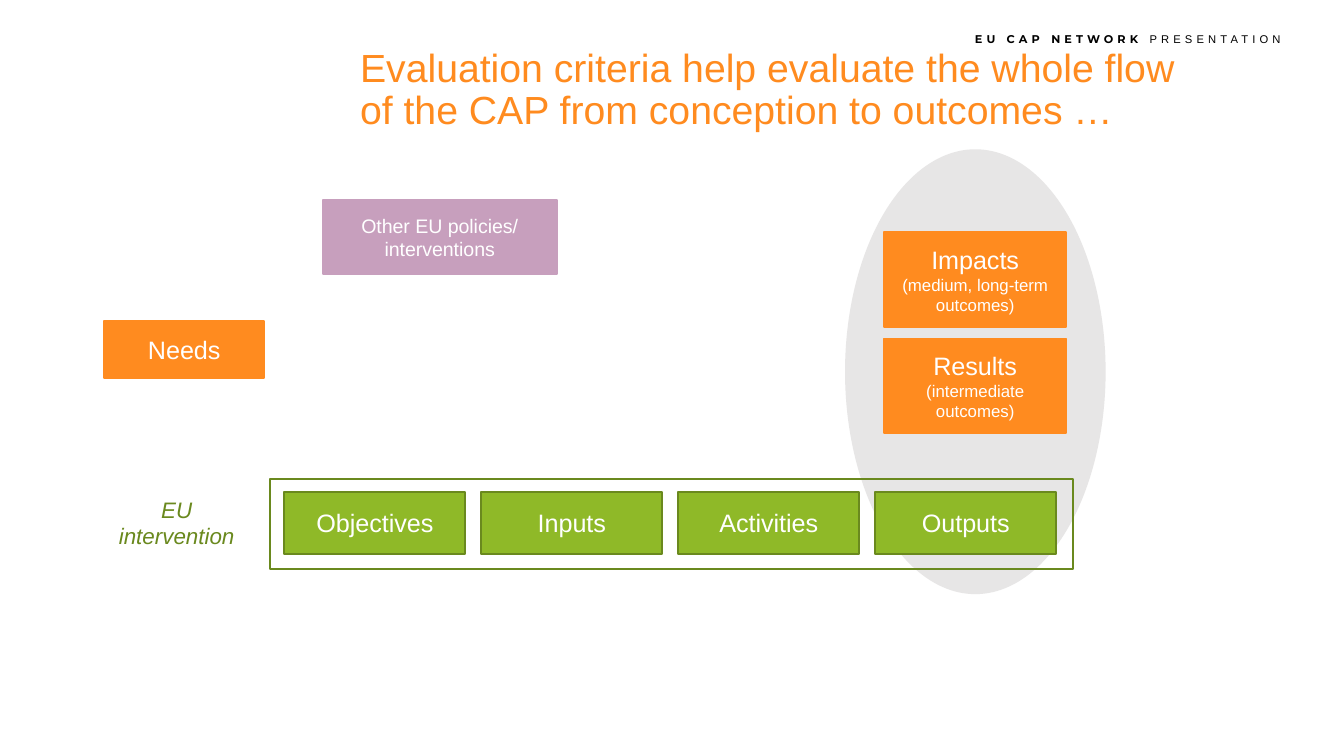
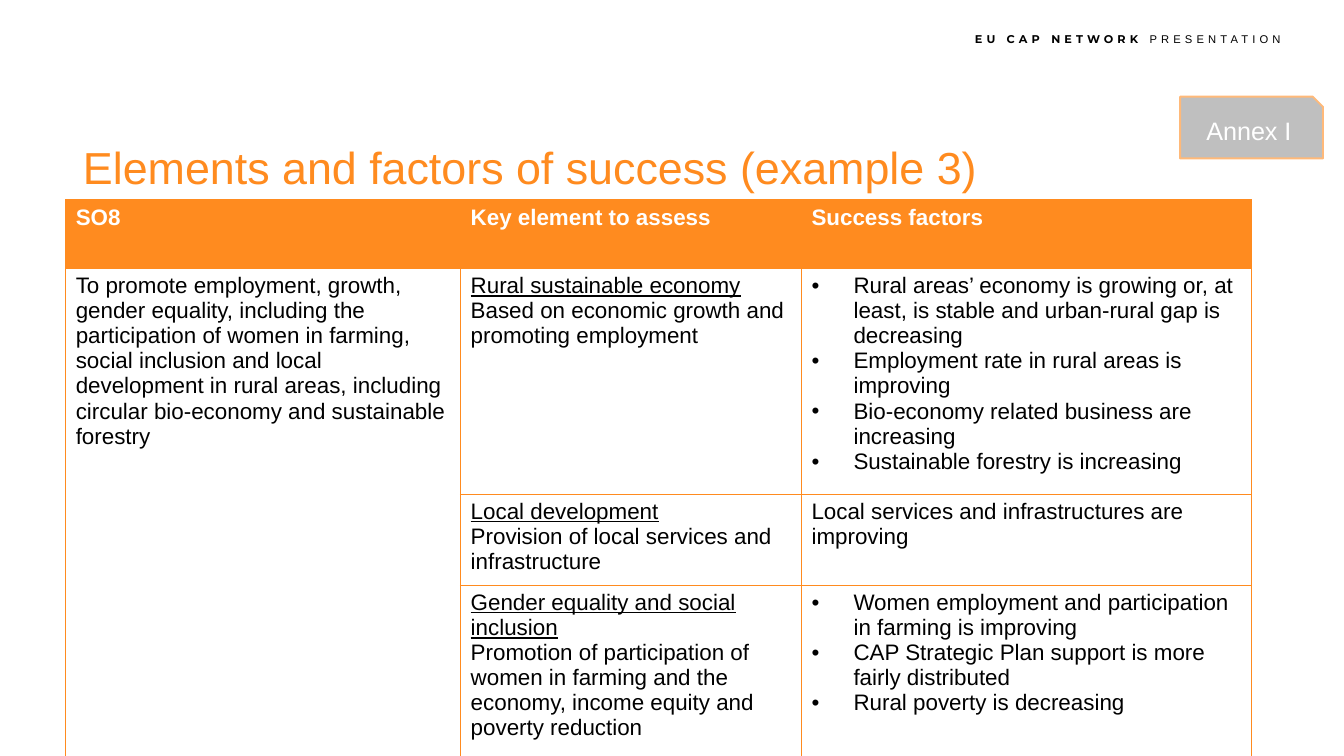
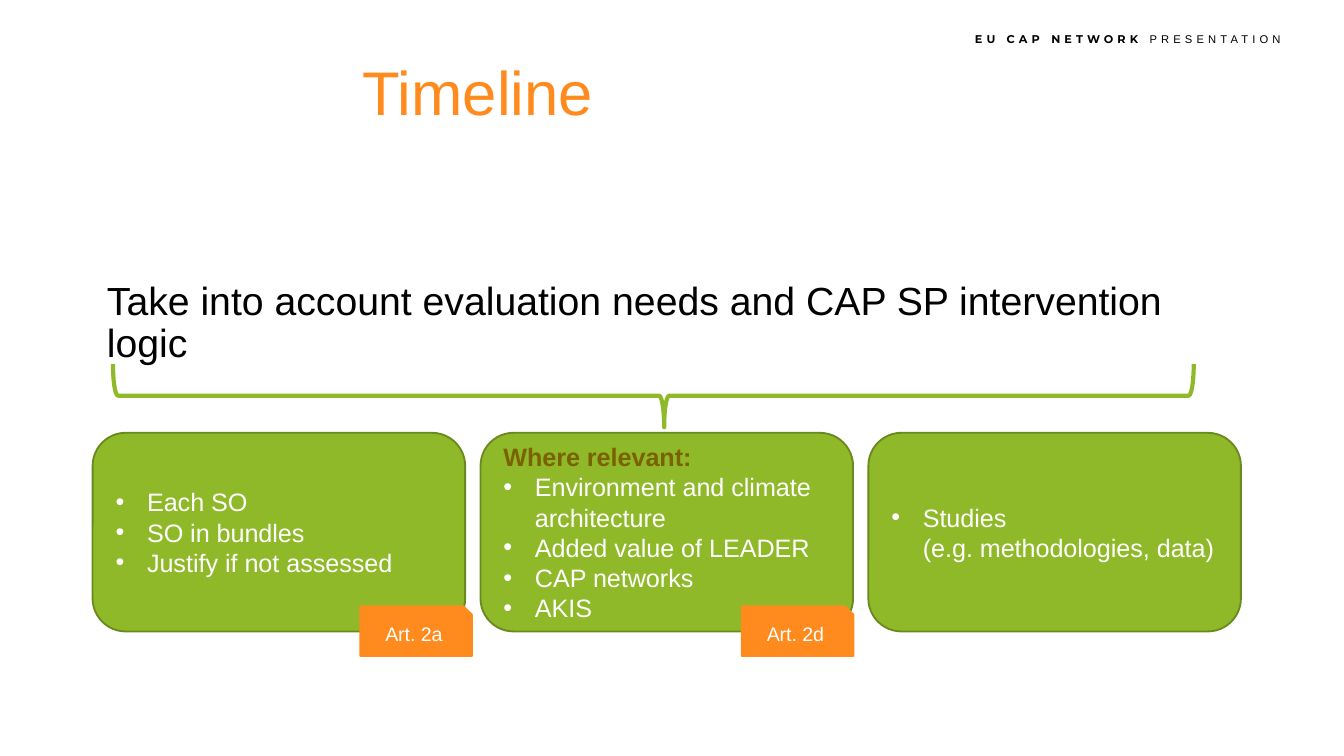
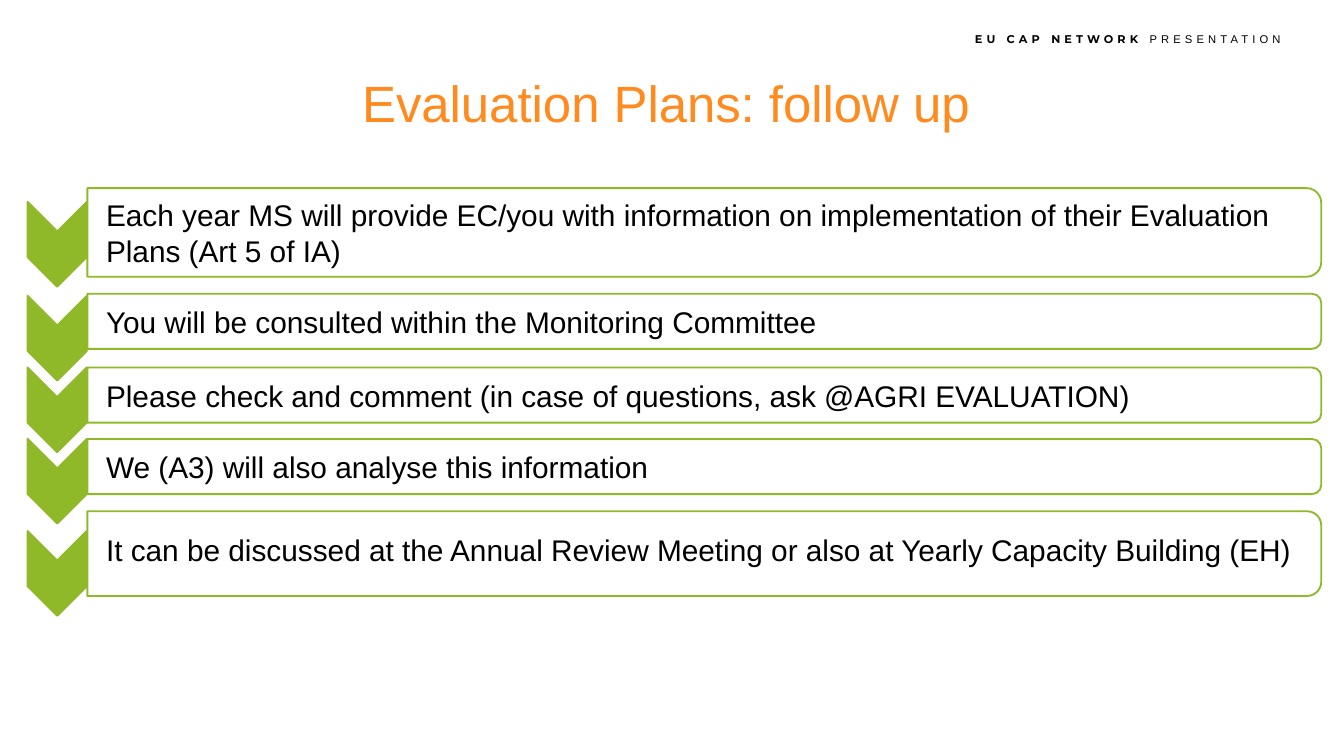
from dataclasses import dataclass, replace
from typing import NamedTuple, Optional

from lxml import etree
from pptx import Presentation
from pptx.dml.color import RGBColor
from pptx.enum.shapes import MSO_SHAPE
from pptx.enum.text import MSO_ANCHOR, MSO_AUTO_SIZE, PP_ALIGN
from pptx.oxml.ns import qn
from pptx.util import Pt

ORANGE = RGBColor(0xFF, 0x8B, 0x1F)
PEACH = RGBColor(0xFF, 0xB9, 0x79)
GREEN = RGBColor(0x8F, 0xB9, 0x28)
MOSS = RGBColor(0x6A, 0x89, 0x1E)
OLIVE = RGBColor(0x7A, 0x62, 0x00)
MAUVE = RGBColor(0xC7, 0x9F, 0xBD)
PALE = RGBColor(0xE7, 0xE6, 0xE6)
GRAY = RGBColor(0xBF, 0xBF, 0xBF)
WHITE = RGBColor(0xFF, 0xFF, 0xFF)
BLACK = RGBColor(0, 0, 0)

RECT = MSO_SHAPE.RECTANGLE
ROUND = MSO_SHAPE.ROUNDED_RECTANGLE
OVAL = MSO_SHAPE.OVAL
SNIP = MSO_SHAPE.SNIP_1_RECTANGLE
BRACE = MSO_SHAPE.RIGHT_BRACE
CHEVRON = MSO_SHAPE.CHEVRON
TAB = MSO_SHAPE.ROUND_2_SAME_RECTANGLE
TOP = MSO_ANCHOR.TOP
MIDDLE = MSO_ANCHOR.MIDDLE
LEFT = PP_ALIGN.LEFT
CENTER = PP_ALIGN.CENTER
RIGHT = PP_ALIGN.RIGHT
GROW = MSO_AUTO_SIZE.SHAPE_TO_FIT_TEXT

FONT = "Arial"
WIDE = (7.2, 3.6, 7.2, 3.6)
TIGHT = (5.4, 2.7, 5.4, 2.7)
STEP_PADS = (10, 0.7, 0.7, 0.7)


class Box(NamedTuple):
    x: float
    y: float
    w: float
    h: float


@dataclass(frozen=True)
class Line:
    text: str
    size: float
    color: RGBColor = WHITE
    align: PP_ALIGN = LEFT
    bold: bool = False
    italic: bool = False
    under: bool = False
    indent: float = 0
    lead: Optional[float] = None


class Look(NamedTuple):
    fill: Optional[RGBColor] = None
    edge: Optional[RGBColor] = None
    width: float = 1


class Step(NamedTuple):
    text: str
    top: float
    high: float
    base: float
    tall: float
    mid: float


GREEN_LOOK = Look(GREEN, MOSS)
ORANGE_LOOK = Look(ORANGE, ORANGE)


def write(frame, lines: list[Line]) -> None:
    for index, line in enumerate(lines):
        para = frame.add_paragraph() if index else frame.paragraphs[0]
        para.text = line.text
        para.alignment = line.align
        if line.lead:
            para.line_spacing = line.lead
        if line.indent:
            props = para._p.get_or_add_pPr()
            props.set("marL", str(Pt(line.indent)))
            props.set("indent", str(-Pt(line.indent)))
            etree.SubElement(props, qn("a:buFont"), typeface=FONT)
            etree.SubElement(props, qn("a:buChar"), char="•")
        font = para.font
        font.name = FONT
        font.size = Pt(line.size)
        font.color.rgb = line.color
        font.bold = line.bold
        font.italic = line.italic
        font.underline = line.under


def pad(target, pads: tuple) -> None:
    (target.margin_left, target.margin_top,
     target.margin_right, target.margin_bottom) = map(Pt, pads)


def fit(frame, anchor: MSO_ANCHOR, pads: tuple = WIDE) -> None:
    frame.word_wrap = True
    frame.vertical_anchor = anchor
    pad(frame, pads)


def label(slide, box: Box, lines: list[Line], anchor=MIDDLE, pads=WIDE):
    frame = slide.shapes.add_textbox(*map(Pt, box)).text_frame
    fit(frame, anchor, pads)
    write(frame, lines)
    return frame


def draw(slide, kind: MSO_SHAPE, box: Box, look: Look,
         lines: Optional[list[Line]] = None, anchor=MIDDLE):
    shape = slide.shapes.add_shape(kind, *map(Pt, box))
    shape.shadow.inherit = False
    if look.fill is None:
        shape.fill.background()
    else:
        shape.fill.solid()
        shape.fill.fore_color.rgb = look.fill
    if look.edge is None:
        shape.line.fill.background()
    else:
        shape.line.color.rgb = look.edge
        shape.line.width = Pt(look.width)
    if lines:
        fit(shape.text_frame, anchor)
        write(shape.text_frame, lines)
    return shape


def turn(slide, kind: MSO_SHAPE, box: Box, look: Look):
    shift = (box.w - box.h) / 2
    flat = Box(box.x + shift, box.y - shift, box.h, box.w)
    shape = draw(slide, kind, flat, look)
    shape.rotation = 90
    return shape


def start(deck, title: str, size: float, box: Box, pads: tuple = WIDE):
    slide = deck.slides.add_slide(deck.slide_layouts[6])
    frame = label(slide, Box(363, 13.7, 330, 14.4), [], TOP)
    frame.auto_size = GROW
    para = frame.paragraphs[0]
    para.alignment = RIGHT
    para.font.size = Pt(6)
    para.font.color.rgb = BLACK
    for text, face, bold in (("EU CAP NETWORK ", "Montserrat", True),
                             ("PRESENTATION", FONT, False)):
        run = para.add_run()
        run.text = text
        run.font.name = face
        run.font.bold = bold
        run._r.get_or_add_rPr().set("spc", "220")
    label(slide, box, [Line(title, size, ORANGE, lead=0.9)], pads=pads)
    return slide


def mid(text: str, size: float = 13.5) -> Line:
    return Line(text, size, align=CENTER)


def flow(deck) -> None:
    slide = start(deck, "Evaluation criteria help evaluate the whole flow of "
                  "the CAP from conception to outcomes …", 21,
                  Box(185.8, 11.5, 453, 74.2))
    draw(slide, OVAL, Box(452.7, 80, 139.6, 238.3), Look(PALE))
    for index, name in enumerate(("Objectives", "Inputs",
                                  "Activities", "Outputs")):
        box = Box(152.4 + index * 105.5, 263.5, 97, 33.2)
        draw(slide, RECT, box, GREEN_LOOK, [mid(name)])
    draw(slide, RECT, Box(55.8, 172, 85.8, 30.5), ORANGE_LOOK, [mid("Needs")])
    for index, (name, note) in enumerate((
            ("Impacts", "(medium, long-term outcomes)"),
            ("Results", "(intermediate outcomes)"))):
        draw(slide, RECT, Box(473.6, 124.4 + index * 57, 97.6, 50.8),
             ORANGE_LOOK, [mid(name), mid(note, 9)])
    draw(slide, RECT, Box(172.9, 107.2, 125.4, 39.6), Look(MAUVE, MAUVE),
         [mid("Other EU policies/ interventions", 10.5)])
    draw(slide, RECT, Box(144.7, 256.8, 430, 48), Look(edge=MOSS))
    draw(slide, RECT, Box(48.2, 262, 93, 36), Look(WHITE),
         [Line("EU intervention", 12, MOSS, CENTER, italic=True)], TOP)


def edge(cell, widths: tuple) -> None:
    props = cell._tc.get_or_add_tcPr()
    for index, (side, width) in enumerate(zip("LRTB", widths)):
        line = etree.Element(qn(f"a:ln{side}"), w=str(Pt(width)))
        fill = etree.SubElement(line, qn("a:solidFill"))
        etree.SubElement(fill, qn("a:srgbClr"), val=str(ORANGE))
        props.insert(index, line)


def factors(deck) -> None:
    def topic(name: str, note: str) -> list[Line]:
        return [Line(name, 12, BLACK, under=True), Line(note, 12, BLACK)]

    def points(*texts: str) -> list[Line]:
        return [Line(text, 12, BLACK, indent=22.5) for text in texts]

    goal = ("To promote employment, growth, gender equality, including the "
            "participation of women in farming, social inclusion and local "
            "development in rural areas, including circular bio-economy and "
            "sustainable forestry")
    rows = [
        [[Line(text, 12, bold=True)] for text in
         ("SO8", "Key element to assess", "Success factors")],
        [[Line(goal, 12, BLACK)],
         topic("Rural sustainable economy",
               "Based on economic growth and promoting employment"),
         points("Rural areas’ economy is growing or, at least, is stable and "
                "urban-rural gap is decreasing",
                "Employment rate in rural areas is improving",
                "Bio-economy related business are increasing",
                "Sustainable forestry is increasing")],
        [[],
         topic("Local development",
               "Provision of local services and infrastructure"),
         [Line("Local services and infrastructures are improving",
               12, BLACK)]],
        [[],
         topic("Gender equality and social inclusion",
               "Promotion of participation of women in farming and the "
               "economy, income equity and poverty reduction"),
         points("Women employment and participation in farming is improving",
                "CAP Strategic Plan support is more fairly distributed",
                "Rural poverty is decreasing")],
    ]
    wides = (211.6, 182.6, 241)
    highs = (36.7, 121, 48.8, 91.4)
    slide = start(deck, "Elements and factors of success (example 3)", 24,
                  Box(37.4, 51.8, 630.7, 78.5))
    table = slide.shapes.add_table(
        len(highs), len(wides), Pt(35.2), Pt(107),
        Pt(sum(wides)), Pt(sum(highs))).table
    for column, wide in zip(table.columns, wides):
        column.width = Pt(wide)
    for row, high in zip(table.rows, highs):
        row.height = Pt(high)
    last = len(wides) - 1
    for down, row in enumerate(rows):
        for across, lines in enumerate(row):
            cell = table.cell(down, across)
            pad(cell, TIGHT)
            if down:
                cell.fill.background()
            else:
                cell.fill.solid()
                cell.fill.fore_color.rgb = ORANGE
            edge(cell, (1 if across else 0.5,
                        1 if across < last else 0.5, 0.5, 0.5))
            write(cell.text_frame, lines)
    table.cell(1, 0).merge(table.cell(3, 0))
    draw(slide, SNIP, Box(632.2, 51.8, 76.6, 33.1), Look(GRAY, PEACH),
         [mid("Annex I")])


def timeline(deck) -> None:
    slide = start(deck, "Timeline", 33, Box(187.2, 15.8, 188.6, 71.3))
    body = draw(slide, ROUND, Box(49.7, 146.9, 620.6, 58.3), Look(),
                [Line("Take into account evaluation needs and CAP SP "
                      "intervention logic", 21, BLACK, lead=0.9)], TOP)
    body.adjustments[0] = 0.03
    point = Line("", 13.5, indent=16.9)
    head = Line("Where relevant:", 13.5, OLIVE, bold=True)
    cards = (
        ([], ("Each SO", "SO in bundles", "Justify if not assessed")),
        ([head], ("Environment and climate architecture",
                  "Added value of LEADER", "CAP networks", "AKIS")),
        ([], ("Studies\v(e.g. methodologies, data)",)),
    )
    for index, (lead, texts) in enumerate(cards):
        draw(slide, ROUND, Box(49.6 + index * 207.8, 231.9, 199.6, 106.4),
             GREEN_LOOK, lead + [replace(point, text=text) for text in texts])
    brace = turn(slide, BRACE, Box(60.5, 195.1, 579, 33.8),
                 Look(edge=GREEN, width=2.25))
    brace.adjustments[0] = 0.08
    brace.adjustments[1] = 0.49
    for left, name in ((193, "Art. 2a"), (397.4, "Art. 2d")):
        draw(slide, SNIP, Box(left, 324.9, 59.8, 26.6), ORANGE_LOOK,
             [mid(name, 10.5)])


def follow(deck) -> None:
    slide = start(deck, "Evaluation Plans: follow up", 27.3,
                  Box(188.6, 0, 354.2, 113.8), TIGHT)
    steps = (
        Step("Each year MS will provide EC/you with information on "
             "implementation of their Evaluation Plans (Art 5 of IA)",
             100.8, 47.5, 103, 43.2, 130.9),
        Step("You will be consulted within the Monitoring Committee",
             157.4, 29.5, 159.1, 26.6, 181.2),
        Step("Please check and comment (in case of questions, "
             "ask @AGRI EVALUATION)", 196.9, 29.5, 198.7, 26.6, 219.6),
        Step("We (A3) will also analyse this information",
             235.2, 29.5, 236.9, 26.6, 257.8),
        Step("It can be discussed at the Annual Review Meeting or also at "
             "Yearly Capacity Building (EH)",
             273.9, 45.4, 275.8, 37.4, 307.2),
    )
    for step in steps:
        turn(slide, CHEVRON, Box(14.8, step.mid - 22.7, 31.7, 45.4),
             Look(GREEN, GREEN))
        bar = turn(slide, TAB, Box(46.8, step.top, 661, step.high),
                   Look(WHITE, GREEN))
        tint = bar.fill._xPr.find(qn("a:solidFill"))[0]
        etree.SubElement(tint, qn("a:alpha"), val="90000")
        label(slide, Box(46.8, step.base, 660, step.tall),
              [Line(step.text, 16, BLACK)], pads=STEP_PADS)


def main() -> None:
    deck = Presentation()
    deck.slide_width = Pt(720)
    deck.slide_height = Pt(405)
    for build in (flow, factors, timeline, follow):
        build(deck)
    deck.save("out.pptx")


if __name__ == "__main__":
    main()
